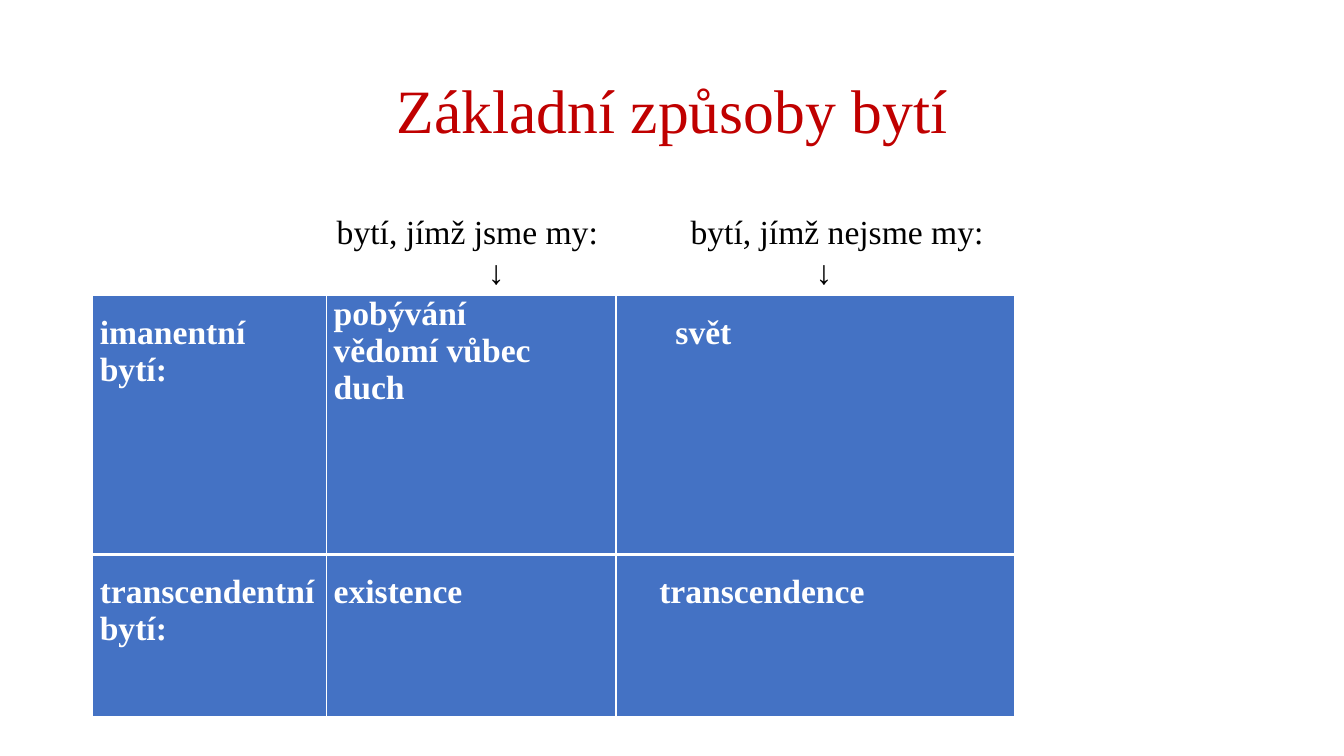
from lxml.etree import SubElement
from pptx import Presentation
from pptx.dml.color import RGBColor
from pptx.enum.text import MSO_ANCHOR as Anchor, PP_ALIGN as Align
from pptx.oxml.ns import qn
from pptx.util import Inches, Pt


def color(value):
    return RGBColor.from_string(value)


def write_text(frame, lines, size=24, fill="000000", bold=False,
               align=Align.LEFT, spacing=1.0, indents=()):
    frame.word_wrap = True
    for index, line in enumerate(lines):
        paragraph = frame.paragraphs[0] if index == 0 else frame.add_paragraph()
        paragraph.alignment = align
        paragraph.line_spacing = spacing
        if index < len(indents):
            properties = paragraph._p.get_or_add_pPr()
            properties.set("marL", str(Inches(indents[index])))
            properties.set("indent", "0")
        run = paragraph.add_run()
        run.text = line
        run.font.name = "Times New Roman"
        run.font.size = Pt(size)
        run.font.bold = bold
        run.font.color.rgb = color(fill)


class SlideBuilder:
    red = "C00000"
    blue = "4472C4"
    white = "FFFFFF"

    def __init__(self, slide):
        self.slide = slide

    def text_box(self, left, top, width, height, lines, anchor=Anchor.TOP, **text_format):
        box = self.slide.shapes.add_textbox(*map(Inches, (left, top, width, height)))
        frame = box.text_frame
        frame.margin_left = frame.margin_right = 0
        frame.margin_top = frame.margin_bottom = 0
        frame.vertical_anchor = anchor
        write_text(frame, lines, **text_format)

    def border(self, cell, side, points):
        line = SubElement(cell._tc.get_or_add_tcPr(), qn(f"a:ln{side}"), w=str(Pt(points)))
        fill = SubElement(line, qn("a:solidFill"))
        SubElement(fill, qn("a:srgbClr"), val=self.white)

    def table(self, left, top, widths, heights, rows):
        frame = self.slide.shapes.add_table(
            len(heights), len(widths), Inches(left), Inches(top),
            Inches(sum(widths)), Inches(sum(heights)))
        table = frame.table
        for column, width in zip(table.columns, widths):
            column.width = Inches(width)
        for row, height in zip(table.rows, heights):
            row.height = Inches(height)
        last_row = len(rows) - 1
        for row_index, row in enumerate(rows):
            for column_index, (lines, left_margin, top_margin) in enumerate(row):
                cell = table.cell(row_index, column_index)
                cell.margin_left = Inches(left_margin)
                cell.margin_top = Inches(top_margin)
                cell.margin_right = Inches(0.1)
                cell.margin_bottom = 0
                self.border(cell, "L", 1)
                self.border(cell, "R", 1)
                self.border(cell, "T", 3 if row_index > 0 else 1)
                self.border(cell, "B", 3 if row_index < last_row else 1)
                cell.fill.solid()
                cell.fill.fore_color.rgb = color(self.blue)
                write_text(cell.text_frame, lines, fill=self.white, bold=True)


def main():
    presentation = Presentation()
    presentation.slide_width = Inches(13.33)
    presentation.slide_height = Inches(7.5)
    slide = presentation.slides.add_slide(presentation.slide_layouts[6])
    builder = SlideBuilder(slide)

    builder.text_box(0.92, 0.4, 11.5, 1.45, ["Základní způsoby bytí"], anchor=Anchor.MIDDLE,
                     size=44, fill=builder.red, align=Align.CENTER, spacing=0.9)

    ways_of_being = [
        (["imanentní bytí:"], 0.07, 0.19),
        (["pobývání", "vědomí vůbec", "duch"], 0.07, 0),
        (["svět"], 0.59, 0.19),
    ], [
        (["transcendentní bytí:"], 0.07, 0.19),
        (["existence"], 0.07, 0.19),
        (["transcendence"], 0.43, 0.19),
    ]
    builder.table(0.92, 2.93, [2.32, 2.87, 3.95], [2.57, 1.61], ways_of_being)

    for left, heading, arrow_indent in [(3.34, "bytí, jímž jsme my:", 1.5),
                                        (6.85, "bytí, jímž nejsme my:", 1.24)]:
        builder.text_box(left, 2.09, 3.2, 0.77, [heading, "↓"], indents=(0, arrow_indent))

    presentation.save("out.pptx")


if __name__ == "__main__":
    main()
